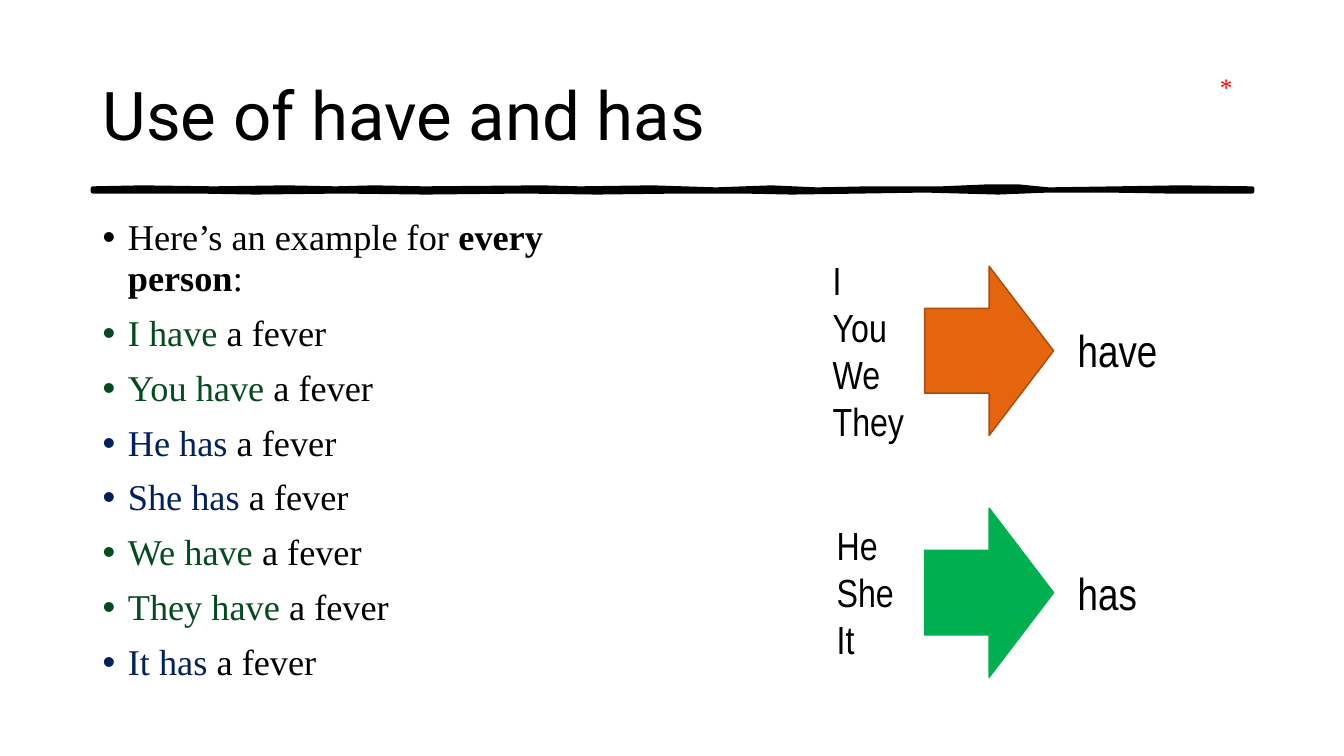
from dataclasses import dataclass

from pptx import Presentation
from pptx.dml.color import RGBColor
from pptx.enum.shapes import MSO_SHAPE
from pptx.enum.text import MSO_ANCHOR, MSO_AUTO_SIZE
from pptx.oxml.ns import qn
from pptx.slide import Slide
from pptx.text.text import TextFrame, _Paragraph
from pptx.util import Inches, Pt
from lxml import etree

RIGHT_ARROW = MSO_SHAPE.RIGHT_ARROW
MIDDLE = MSO_ANCHOR.MIDDLE
FIT_SHAPE = MSO_AUTO_SIZE.SHAPE_TO_FIT_TEXT
NO_FIT = MSO_AUTO_SIZE.NONE

BLACK = RGBColor(0x00, 0x00, 0x00)
RED = RGBColor(0xFF, 0x00, 0x00)
DARK_GREEN = RGBColor(0x04, 0x4B, 0x1E)
NAVY = RGBColor(0x00, 0x20, 0x60)
ORANGE = RGBColor(0xE4, 0x65, 0x0E)
BROWN = RGBColor(0xA9, 0x4B, 0x0A)
GREEN = RGBColor(0x00, 0xB0, 0x50)

SERIF = "Times New Roman"
NARROW = "Arial Narrow"
HEADING = "Roboto"
BODY_SIZE = 25.9


@dataclass
class Label:
    text: str
    left: float
    top: float
    width: float
    height: float
    size: float
    font: str
    color: RGBColor = BLACK


@dataclass
class Arrow:
    top: float
    fill: RGBColor
    line: RGBColor


@dataclass
class Piece:
    text: str
    color: RGBColor = BLACK
    bold: bool = False


TITLE = Label("Use of have and has", 0.92, 0.4, 11.5, 1.45, 48, HEADING)
LABELS = [
    Label("*", 12, 0.66, 0.33, 0.4, 18, SERIF, RED),
    Label("I\nYou\nWe\nThey", 8.16, 2.49, 0.92, 1.99, 28, NARROW),
    Label("have", 10.59, 3.15, 1, 0.64, 32, NARROW),
    Label("He\nShe\nIt", 8.2, 5.12, 0.89, 1.51, 28, NARROW),
    Label("has", 10.59, 5.56, 0.8, 0.64, 32, NARROW),
]
ARROWS = [Arrow(2.64, ORANGE, BROWN), Arrow(5.04, GREEN, GREEN)]

VERB_COLORS = {"have": DARK_GREEN, "has": NAVY}
SUBJECTS = [
    ("I", "have"), ("You", "have"), ("He", "has"), ("She", "has"),
    ("We", "have"), ("They", "have"), ("It", "has"),
]
BULLETS = [
    [Piece("Here’s an example for "), Piece("every person", bold=True), Piece(":")]
] + [
    [Piece(f"{subject} {verb} ", VERB_COLORS[verb]), Piece("a fever")]
    for subject, verb in SUBJECTS
]

RULE_TOP = [
    (0.92, 1.87), (1.41, 1.86), (2.12, 1.87), (2.84, 1.86), (3.33, 1.87),
    (3.71, 1.86), (4.2, 1.87), (5.37, 1.86), (5.75, 1.87), (6.47, 1.86),
    (7.1, 1.88), (7.65, 1.86), (8.1, 1.88), (8.62, 1.87), (9.34, 1.87),
    (9.8, 1.85), (10.1, 1.85), (10.4, 1.88), (11.09, 1.87), (11.7, 1.86),
    (12.42, 1.87),
]
RULE_BOTTOM = [
    (12.42, 1.9), (11.58, 1.9), (10.98, 1.89), (10.4, 1.89), (9.9, 1.91),
    (9.17, 1.89), (8.56, 1.9), (7.85, 1.91), (7.36, 1.9), (6.75, 1.9),
    (5.92, 1.91), (5.2, 1.9), (4.22, 1.91), (3.39, 1.9), (2.53, 1.91),
    (1.95, 1.9), (0.92, 1.9),
]


def add_text_frame(s: Slide, left: float, top: float,
                   width: float, height: float) -> TextFrame:
    sp = s.shapes.add_textbox(Inches(left), Inches(top), Inches(width), Inches(height))
    return sp.text_frame


def format_paragraph(p: _Paragraph, size: float, font: str, color: RGBColor) -> None:
    for r in p.runs:
        r.font.size = Pt(size)
        r.font.name = font
        r.font.color.rgb = color


def add_label(s: Slide, label: Label) -> TextFrame:
    tf = add_text_frame(s, label.left, label.top, label.width, label.height)
    tf.text = label.text
    tf.word_wrap = False
    tf.auto_size = FIT_SHAPE
    for p in tf.paragraphs:
        format_paragraph(p, label.size, label.font, label.color)
    return tf


def add_title(s: Slide) -> None:
    tf = add_label(s, TITLE)
    tf.word_wrap = True
    tf.auto_size = NO_FIT
    tf.vertical_anchor = MIDDLE


def add_rule(s: Slide) -> None:
    points = [(Inches(x), Inches(y)) for x, y in RULE_TOP + RULE_BOTTOM]
    builder = s.shapes.build_freeform(*points[0])
    builder.add_line_segments(points[1:], close=True)
    sp = builder.convert_to_shape()
    sp.shadow.inherit = False
    sp.fill.solid()
    sp.fill.fore_color.rgb = BLACK
    sp.line.color.rgb = BLACK
    sp.line.width = Pt(3)


def add_bullet(p: _Paragraph, pieces: list[Piece]) -> None:
    p.line_spacing = 0.94
    p.space_before = Pt(10)
    for piece in pieces:
        r = p.add_run()
        r.text = piece.text
        r.font.size = Pt(BODY_SIZE)
        r.font.name = SERIF
        r.font.bold = piece.bold
        r.font.color.rgb = piece.color
    pPr = p._p.get_or_add_pPr()
    pPr.set("marL", str(Inches(0.25)))
    pPr.set("indent", str(Inches(-0.25)))
    etree.SubElement(pPr, qn("a:buFont")).set("typeface", "Arial")
    etree.SubElement(pPr, qn("a:buChar")).set("char", "•")


def add_examples(s: Slide) -> None:
    tf = add_text_frame(s, 0.92, 2.11, 5.75, 4.65)
    tf.word_wrap = True
    for i, pieces in enumerate(BULLETS):
        add_bullet(tf.add_paragraph() if i else tf.paragraphs[0], pieces)


def add_arrow(s: Slide, arrow: Arrow) -> None:
    sp = s.shapes.add_shape(RIGHT_ARROW, Inches(9.17), Inches(arrow.top),
                            Inches(1.28), Inches(1.68))
    sp.shadow.inherit = False
    sp.fill.solid()
    sp.fill.fore_color.rgb = arrow.fill
    sp.line.color.rgb = arrow.line
    sp.line.width = Pt(1)


def main() -> None:
    prs = Presentation()
    prs.slide_width = Inches(13.33)
    prs.slide_height = Inches(7.5)
    s = prs.slides.add_slide(prs.slide_layouts[6])
    add_rule(s)
    add_title(s)
    add_examples(s)
    for arrow in ARROWS:
        add_arrow(s, arrow)
    for label in LABELS:
        add_label(s, label)
    prs.save("out.pptx")


if __name__ == "__main__":
    main()
